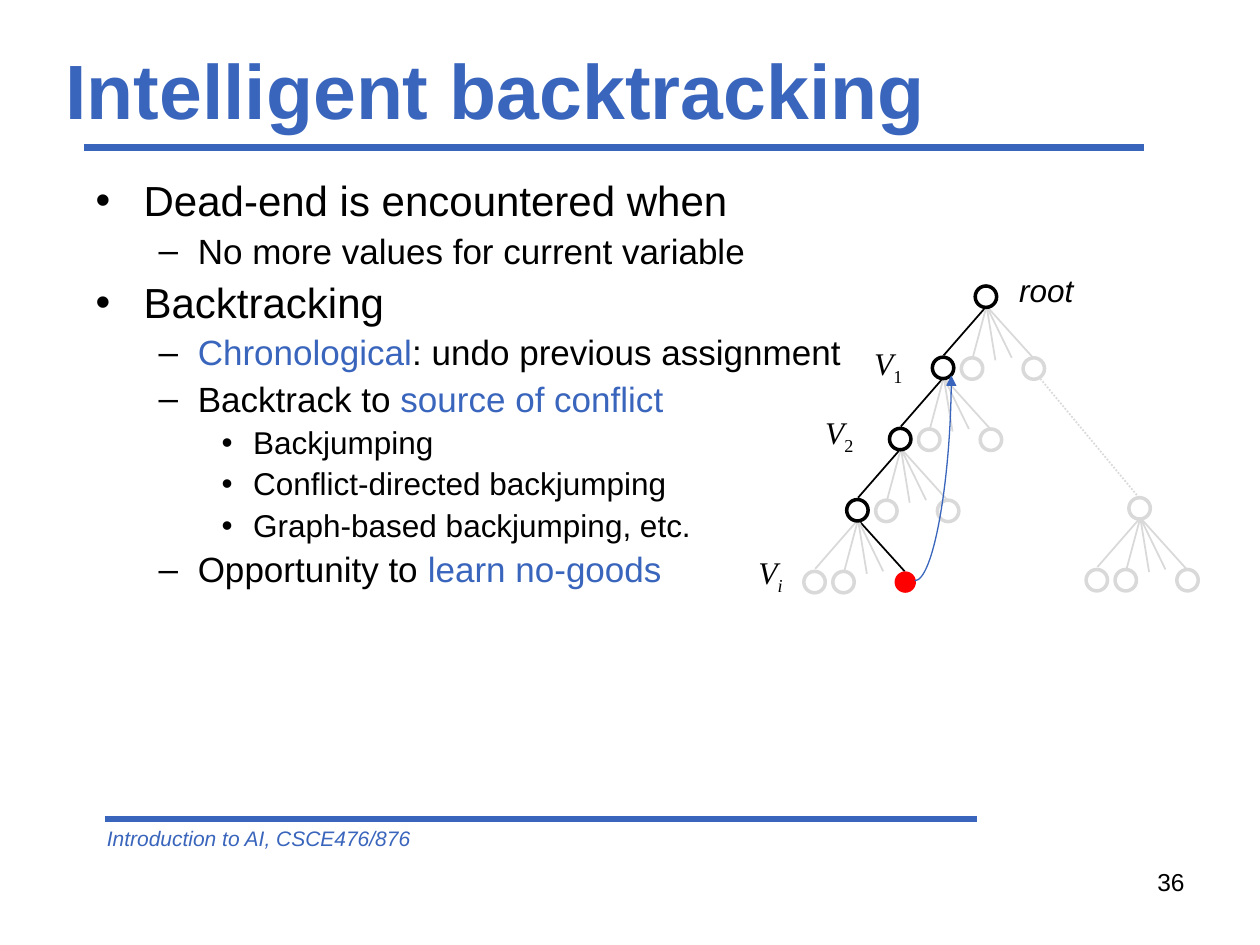
from lxml.etree import SubElement
from pptx import Presentation
from pptx.dml.color import RGBColor
from pptx.enum.dml import MSO_LINE
from pptx.enum.shapes import MSO_CONNECTOR, MSO_SHAPE
from pptx.enum.text import MSO_ANCHOR, MSO_AUTO_SIZE, PP_ALIGN
from pptx.oxml.ns import qn
from pptx.util import Inches, Pt

RULE_BLUE, BLUE, BLACK, GREY, RED = "3A65BC", "3965BC", "000000", "D9D9D9", "FF0000"
NODE = 0.17
EDGE_ENDS = [(-0.34, 0.39), (-0.11, 0.41), (0.37, 0.41), (0.2, 0.41), (0.07, 0.43)]
CHILD_SPOTS = [(-0.34, 0.57), (-0.11, 0.57), (0.38, 0.57)]
LEVELS = [(24, 0.38, -0.38, "•"), (20, 0.81, -0.31, "–"), (18, 1.25, -0.25, "•")]
OUTLINE = [
    (0, [("Dead-end is encountered when", BLACK)]),
    (1, [("No more values for current variable", BLACK)]),
    (0, [("Backtracking", BLACK)]),
    (1, [("Chronological", BLUE), (": undo previous assignment", BLACK)]),
    (1, [("Backtrack to ", BLACK), ("source of conflict", BLUE)]),
    (2, [("Backjumping", BLACK)]),
    (2, [("Conflict-directed backjumping", BLACK)]),
    (2, [("Graph-based backjumping, etc.", BLACK)]),
    (1, [("Opportunity to ", BLACK), ("learn no-goods", BLUE)]),
]


def color(value):
    """Turn a hex string into a colour."""
    return RGBColor.from_string(value)


def place(shape, left, top, width, height):
    """Move and size a shape, in inches."""
    shape.left, shape.top = Inches(left), Inches(top)
    shape.width, shape.height = Inches(width), Inches(height)


def style(font, size, shade, name="Arial", bold=False, italic=False):
    """Format a font."""
    font.name, font.size, font.bold, font.italic = name, Pt(size), bold, italic
    font.color.rgb = color(shade)


def add_line(shapes, start, end, shade, width=1, kind=MSO_CONNECTOR.STRAIGHT):
    """Add a connector without a shadow."""
    line = shapes.add_connector(kind, *map(Inches, (*start, *end)))
    line.line.color.rgb = color(shade)
    line.line.width = Pt(width)
    SubElement(line._element.spPr, qn("a:effectLst"))
    return line


def add_node(shapes, left, top, shade, filled=False):
    """Add a tree node as a ring or a disc."""
    node = shapes.add_shape(MSO_SHAPE.OVAL, *map(Inches, (left, top, NODE, NODE)))
    node.shadow.inherit = False
    if filled:
        node.fill.solid()
        node.fill.fore_color.rgb = color(shade)
        node.line.fill.background()
    else:
        node.fill.background()
        node.line.color.rgb = color(shade)
        node.line.width = Pt(2)


def add_fan(shapes, left, top, shade, children, path_edge=None):
    """Add a node with its five branches and the chosen children."""
    x, y = left + 0.09, top + 0.16
    for index, (dx, dy) in enumerate(EDGE_ENDS):
        add_line(shapes, (x + dx, y + dy), (x, y), BLACK if index == path_edge else GREY)
    add_node(shapes, left, top, shade)
    for index in children:
        dx, dy = CHILD_SPOTS[index]
        dead_end = index == path_edge
        add_node(shapes, left + dx, top + dy, RED if dead_end else GREY, dead_end)


def add_text(slide, place_at, text, size, shade, name="Arial", italic=False, wrap=True):
    """Add a one-line text box and return its paragraph."""
    box = slide.shapes.add_textbox(*map(Inches, place_at))
    box.text_frame.word_wrap = wrap
    para = box.text_frame.paragraphs[0]
    para.text = text
    style(para.runs[0].font, size, shade, name, italic=italic)
    return para


def add_variable(slide, left, top, width, index, italic=False):
    """Add a variable label with a subscript."""
    para = add_text(slide, (left, top, width, 0.4), "V", 18, BLACK, "Times New Roman", True, False)
    span = para.add_run()
    span.text = index
    style(span.font, 18, BLACK, "Times New Roman", italic=italic)
    span._r.get_or_add_rPr().set("baseline", "-25000")


def set_bullet(para, margin, indent, mark):
    """Give a paragraph its indents and a black bullet."""
    properties = para._p.get_or_add_pPr()
    properties.set("marL", str(Inches(margin)))
    properties.set("indent", str(Inches(indent)))
    SubElement(SubElement(properties, qn("a:buClr")), qn("a:srgbClr"), val=BLACK)
    SubElement(properties, qn("a:buFont"), typeface="Arial")
    SubElement(properties, qn("a:buChar"), char=mark)


def fill_title(title):
    """Write the title."""
    place(title, 0.42, 0.33, 9, 0.75)
    frame = title.text_frame
    frame.text = "Intelligent backtracking"
    frame.auto_size = MSO_AUTO_SIZE.NONE
    frame.vertical_anchor = MSO_ANCHOR.MIDDLE
    para = frame.paragraphs[0]
    para.alignment = PP_ALIGN.LEFT
    style(para.runs[0].font, 44, RULE_BLUE, bold=True)


def fill_body(body):
    """Write the bulleted outline."""
    place(body, 0.66, 1.38, 6.23, 4.9)
    frame = body.text_frame
    frame.auto_size = MSO_AUTO_SIZE.NONE
    for number, (level, spans) in enumerate(OUTLINE):
        para = frame.add_paragraph() if number else frame.paragraphs[0]
        size, margin, indent, mark = LEVELS[level]
        para.level = level
        set_bullet(para, margin, indent, mark)
        para.line_spacing = 0.9
        para.space_before = Pt(round(size * 0.24, 1) if number else 0)
        for text, shade in spans:
            span = para.add_run()
            span.text = text
            style(span.font, size, shade)


def draw_tree(slide):
    """Draw the search tree with its path, labels and backjump."""
    shapes = slide.shapes
    for depth in range(3, -1, -1):
        last = depth == 3
        add_fan(shapes, 7.74 - 0.34 * depth, 2.27 + 0.565 * depth, BLACK,
                (0, 1, 2) if last else (1, 2), 2 if last else 0)
    add_fan(shapes.add_group_shape().shapes, 8.96, 3.95, GREY, (0, 1, 2))
    add_line(shapes, (9.04, 3.95), (8.26, 3.01), GREY).line.dash_style = MSO_LINE.ROUND_DOT
    add_text(slide, (7.99, 2.1, 0.64, 0.4), "root", 18, BLACK, italic=True, wrap=False)
    add_variable(slide, 6.84, 2.68, 0.44, "1")
    add_variable(slide, 6.45, 3.23, 0.44, "2")
    add_variable(slide, 5.92, 4.34, 0.4, "i", italic=True)
    jump = add_line(shapes, (7.26, 4.61), (7.55, 2.98), BLUE, 0.75, MSO_CONNECTOR.CURVE)
    jump._element.spPr.find(qn("a:prstGeom")).set("prst", "curvedConnector2")
    SubElement(jump.line._get_or_add_ln(), qn("a:tailEnd"), type="triangle")


def main():
    """Build the slide and save it."""
    deck = Presentation()
    deck.slide_width, deck.slide_height = Inches(10), Inches(7.5)
    slide = deck.slides.add_slide(deck.slide_layouts[1])
    add_line(slide.shapes, (0.67, 1.17), (9.08, 1.17), RULE_BLUE, 4)
    add_line(slide.shapes, (0.83, 6.5), (7.75, 6.5), RULE_BLUE, 4)
    add_text(slide, (0.75, 6.5, 5.25, 0.3), "Introduction to AI, CSCE476/876", 12, RULE_BLUE, italic=True)
    fill_title(slide.shapes.title)
    number = add_text(slide, (7.17, 6.83, 2.33, 0.52), "36", 14, BLACK)
    number.alignment = PP_ALIGN.RIGHT
    fill_body(slide.placeholders[1])
    draw_tree(slide)
    deck.save("out.pptx")


if __name__ == "__main__":
    main()
